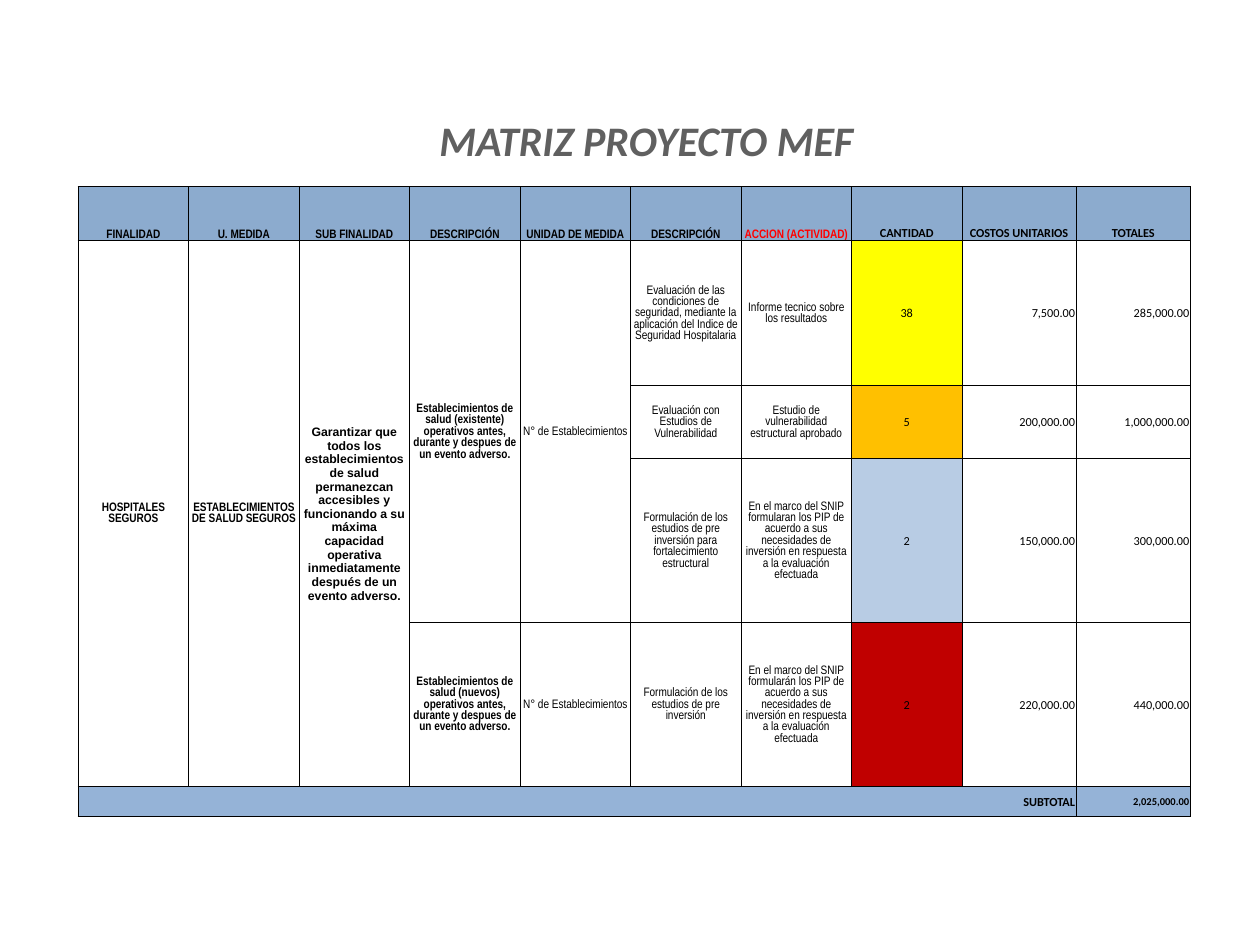
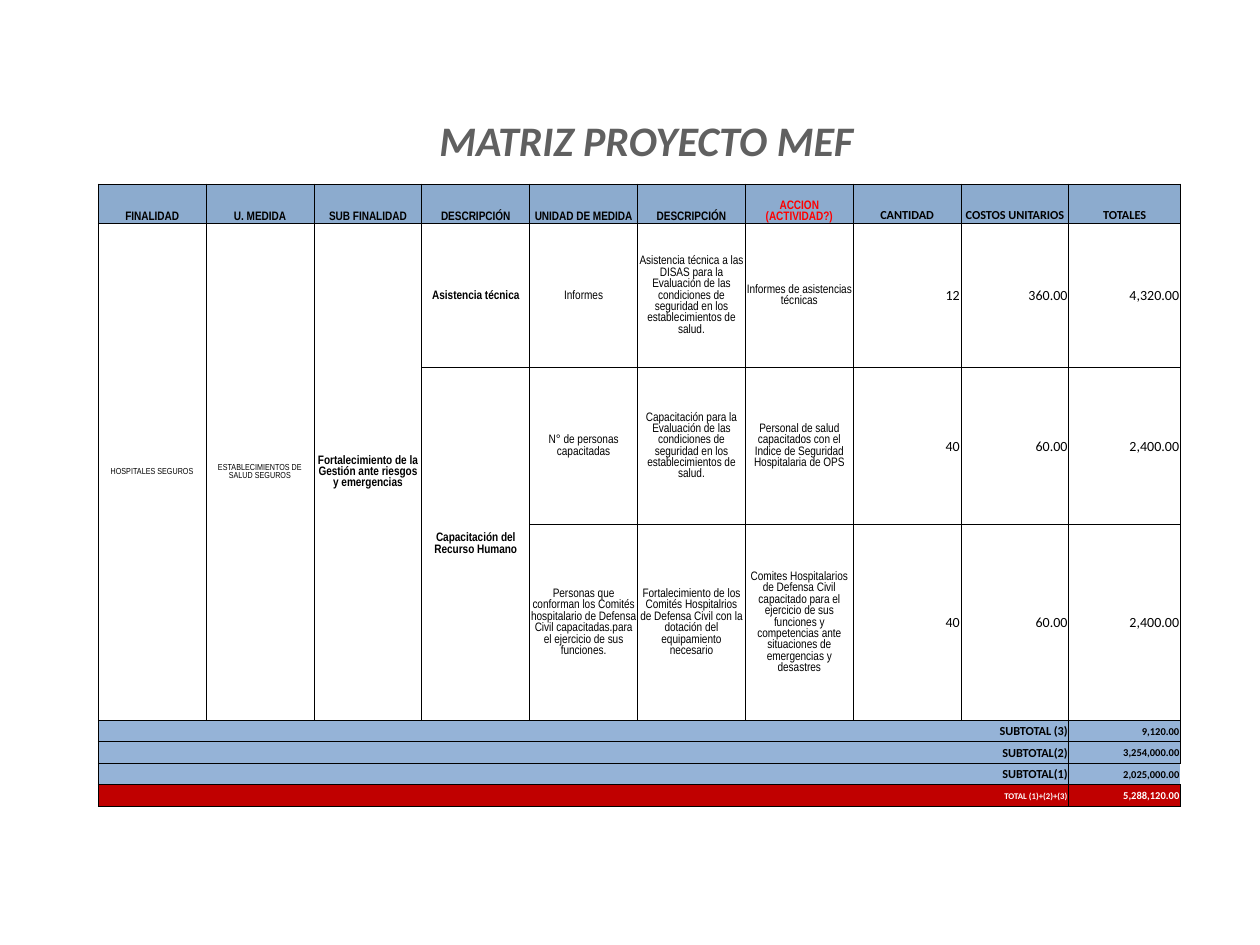
from dataclasses import dataclass, field
from lxml import etree
from pptx import Presentation
from pptx.dml.color import RGBColor
from pptx.enum.text import MSO_ANCHOR, PP_ALIGN
from pptx.oxml.ns import qn
from pptx.util import Inches, Pt

CENTER, RIGHT = PP_ALIGN.CENTER, PP_ALIGN.RIGHT
MIDDLE, BOTTOM = MSO_ANCHOR.MIDDLE, MSO_ANCHOR.BOTTOM
TITLE_ONLY = 5


@dataclass(frozen=True)
class Theme:
    ink: str = "000000"
    paper: str = "FFFFFF"
    title: str = "606060"
    header: str = "8CABCE"
    subtotal: str = "95B3D7"
    alert: str = "FF0000"
    yellow: str = "FFFF00"
    orange: str = "FFC000"
    pale_blue: str = "B8CCE4"
    dark_red: str = "C00000"
    narrow: str = "Arial Narrow"
    wide: str = "Arial"
    figures: str = "Calibri"
    title_size: int = 24
    figure_size: int = 8
    body_size: int = 7
    sum_size: int = 6
    small_size: int = 5
    border: float = 0.5
    inset: float = 0.01


THEME = Theme()
GRID_COLUMNS, GRID_ROWS = 100, 75
TITLE = "MATRIZ PROYECTO MEF"
TITLE_BOX = (33.7, 8.6, 35.2, 5)
HEADINGS = ["FINALIDAD", "U. MEDIDA", "SUB FINALIDAD", "DESCRIPCIÓN", "UNIDAD DE MEDIDA",
            "DESCRIPCIÓN", None, "CANTIDAD", "COSTOS UNITARIOS", "TOTALES"]
ACTION_COLUMN, FIRST_FIGURE_COLUMN = 6, 7
LAST_COLUMN = len(HEADINGS) - 1


@dataclass
class Entry:
    text: str
    format: dict = field(default_factory=dict)
    fill: str = THEME.paper
    anchor: int = MIDDLE
    rows: int = 1
    columns: int = 1
    sides: str = "LRTB"


def plain(text, **format):
    return Entry(text, format)


def strong(text, rows=1, **format):
    return Entry(text, {"bold": True, **format}, rows=rows)


def figure(text, fill=THEME.paper, **format):
    return Entry(text, {"font": THEME.figures, "align": RIGHT, **format}, fill)


def figures(*texts, size):
    return [figure(text, size=size) for text in texts]


def header_row(action):
    row = []
    for column, heading in enumerate(HEADINGS):
        format = {"bold": True}
        if column == ACTION_COLUMN:
            format["color"] = THEME.alert
        elif column >= FIRST_FIGURE_COLUMN:
            format["font"] = THEME.figures
        row.append(Entry(heading or action, format, THEME.header, BOTTOM))
    return row


def sum_row(label, amount, fill=THEME.subtotal, size=THEME.body_size,
            color=THEME.ink, sides="LRTB"):
    caption = figure(label, fill, bold=True, size=size, color=color)
    caption.columns = LAST_COLUMN
    total = figure(amount, fill, bold=True, size=THEME.sum_size, color=color)
    total.sides = sides
    return [caption] + [None] * (LAST_COLUMN - 1) + [total]


def write(frame, text, font=THEME.narrow, size=THEME.body_size, color=THEME.ink,
          bold=False, italic=False, align=CENTER):
    paragraph = frame.paragraphs[0]
    paragraph.alignment = align
    run = paragraph.add_run()
    run.text = text
    run.font.name = font
    run.font.size = Pt(size)
    run.font.bold = bold
    run.font.italic = italic
    run.font.color.rgb = RGBColor.from_string(color)


def place(box, deck):
    left, top, width, height = box
    column, row = deck.slide_width / GRID_COLUMNS, deck.slide_height / GRID_ROWS
    return [round(length) for length in (left * column, top * row, width * column, height * row)]


def share(total, weights):
    return [round(total * weight / sum(weights)) for weight in weights]


def draw_borders(cell, sides):
    properties = cell._tc.get_or_add_tcPr()
    for side in "LRTB":
        line = etree.SubElement(properties, qn(f"a:ln{side}"), w=str(Pt(THEME.border)))
        if side in sides:
            paint = etree.SubElement(line, qn("a:solidFill"))
            etree.SubElement(paint, qn("a:srgbClr"), val=THEME.ink)
        else:
            etree.SubElement(line, qn("a:noFill"))


def paint_cell(cell, entry):
    draw_borders(cell, entry.sides)
    cell.fill.solid()
    cell.fill.fore_color.rgb = RGBColor.from_string(entry.fill)
    cell.margin_left = cell.margin_right = cell.margin_top = Inches(THEME.inset)
    cell.margin_bottom = 0
    cell.vertical_anchor = entry.anchor


def add_title(slide, box):
    title = slide.shapes.title
    title.left, title.top, title.width, title.height = box
    frame = title.text_frame
    frame.word_wrap = False
    frame.vertical_anchor = MIDDLE
    write(frame, TITLE, font=THEME.figures, size=THEME.title_size, color=THEME.title,
          bold=True, italic=True)


def add_matrix(slide, box, column_weights, row_weights, entries):
    matrix = slide.shapes.add_table(len(row_weights), len(column_weights), *box).table
    matrix.first_row = matrix.horz_banding = False
    for column, width in zip(matrix.columns, share(box[2], column_weights)):
        column.width = width
    for row, height in zip(matrix.rows, share(box[3], row_weights)):
        row.height = height
    for r, row in enumerate(entries):
        for c, entry in enumerate(row):
            if entry is None:
                continue
            for y in range(r, r + entry.rows):
                for x in range(c, c + entry.columns):
                    paint_cell(matrix.cell(y, x), entry)
            cell = matrix.cell(r, c)
            if entry.rows * entry.columns > 1:
                cell.merge(matrix.cell(r + entry.rows - 1, c + entry.columns - 1))
            write(cell.text_frame, entry.text, **entry.format)


def matrix_slide(deck, box, column_weights, row_weights, entries):
    slide = deck.slides.add_slide(deck.slide_layouts[TITLE_ONLY])
    add_title(slide, place(TITLE_BOX, deck))
    add_matrix(slide, place(box, deck), column_weights, row_weights, entries)


def hospital_entries():
    def facilities(kind):
        return (f"Establecimientos de salud ({kind}) operativos antes, durante y despues "
                "de un evento adverso.")

    def investment(verb):
        return (f"En el marco del SNIP {verb} los PIP de acuerdo a sus necesidades de "
                "inversión en respuesta a la evaluación efectuada")

    def costs(quantity, fill, unit_cost, total):
        return [figure(quantity, fill, align=CENTER), figure(unit_cost), figure(total)]

    unit = "N° de Establecimientos"
    return [
        header_row("ACCION (ACTIVIDAD)"),
        [strong("HOSPITALES SEGUROS", 4),
         strong("ESTABLECIMIENTOS DE SALUD SEGUROS", 4),
         strong("Garantizar que todos los establecimientos de salud permanezcan accesibles y "
                "funcionando a su máxima capacidad operativa inmediatamente después de un "
                "evento adverso.", 4, font=THEME.wide),
         strong(facilities("existente"), 3),
         Entry(unit, rows=3),
         plain("Evaluación de las condiciones de seguridad, mediante la aplicación del "
               "Indice de Seguridad Hospitalaria"),
         plain("Informe tecnico sobre los resultados"),
         *costs("38", THEME.yellow, "7,500.00", "285,000.00")],
        [None] * 5 + [
            plain("Evaluación con Estudios de Vulnerabilidad"),
            plain("Estudio de vulnerabilidad estructural aprobado"),
            *costs("5", THEME.orange, "200,000.00", "1,000,000.00")],
        [None] * 5 + [
            plain("Formulación de los estudios de pre inversión para fortalecimiento estructural"),
            plain(investment("formularan")),
            *costs("2", THEME.pale_blue, "150,000.00", "300,000.00")],
        [None] * 3 + [
            strong(facilities("nuevos")),
            plain(unit),
            plain("Formulación de los estudios de pre inversión"),
            plain(investment("formularán")),
            *costs("2", THEME.dark_red, "220,000.00", "440,000.00")],
        sum_row("SUBTOTAL", "2,025,000.00"),
    ]


def management_entries():
    def small(text):
        return Entry(text, {"size": THEME.small_size}, rows=3)

    conditions = "Evaluación de las condiciones de seguridad en los establecimientos de salud."
    size = THEME.figure_size
    return [
        header_row("ACCION (ACTIVIDAD?)"),
        [small("HOSPITALES SEGUROS"),
         small("ESTABLECIMIENTOS DE SALUD SEGUROS"),
         strong("Fortalecimiento de la Gestión ante riesgos y emergencias", 3),
         strong("Asistencia técnica"),
         plain("Informes"),
         plain(f"Asistencia técnica a las DISAS para la {conditions}"),
         plain("Informes de asistencias técnicas"),
         *figures("12", "360.00", "4,320.00", size=size)],
        [None] * 3 + [
            strong("Capacitación del Recurso Humano", 2),
            plain("N° de personas capacitadas"),
            plain(f"Capacitación para la {conditions}"),
            plain("Personal de salud capacitados con el Indice de Seguridad Hospitalaria de OPS"),
            *figures("40", "60.00", "2,400.00", size=size)],
        [None] * 4 + [
            plain("Personas que conforman los Comités hospitalario de Defensa Civil "
                  "capacitadas.para el ejercicio de sus funciones."),
            plain("Fortalecimiento de los Comités Hospitalrios de Defensa Civil con la "
                  "dotación del equipamiento necesario"),
            plain("Comites Hospitalarios de Defensa Civil capacitado para el ejercicio de sus "
                  "funciones y competencias ante situaciones de emergencias y desastres"),
            *figures("40", "60.00", "2,400.00", size=size)],
        sum_row("SUBTOTAL (3)", "9,120.00"),
        sum_row("SUBTOTAL(2)", "3,254,000.00"),
        sum_row("SUBTOTAL(1)", "2,025,000.00", sides="LTB"),
        sum_row("TOTAL (1)+(2)+(3)", "5,288,120.00", THEME.dark_red, THEME.small_size,
                THEME.paper),
    ]


def main():
    deck = Presentation()
    deck.slide_width, deck.slide_height = Inches(10), Inches(7.5)
    matrix_slide(deck, (6.2, 14.8, 88.3, 50), [0.88] * 8 + [0.91] * 2,
                 [0.43, 1.15, 0.58, 1.3, 1.3, 0.24], hospital_entries())
    matrix_slide(deck, (7.8, 14.6, 85.9, 49.4), [0.86] * 9 + [0.89],
                 [0.31, 1.14, 1.24, 1.55] + [0.17] * 4, management_entries())
    deck.save("out.pptx")


if __name__ == "__main__":
    main()
